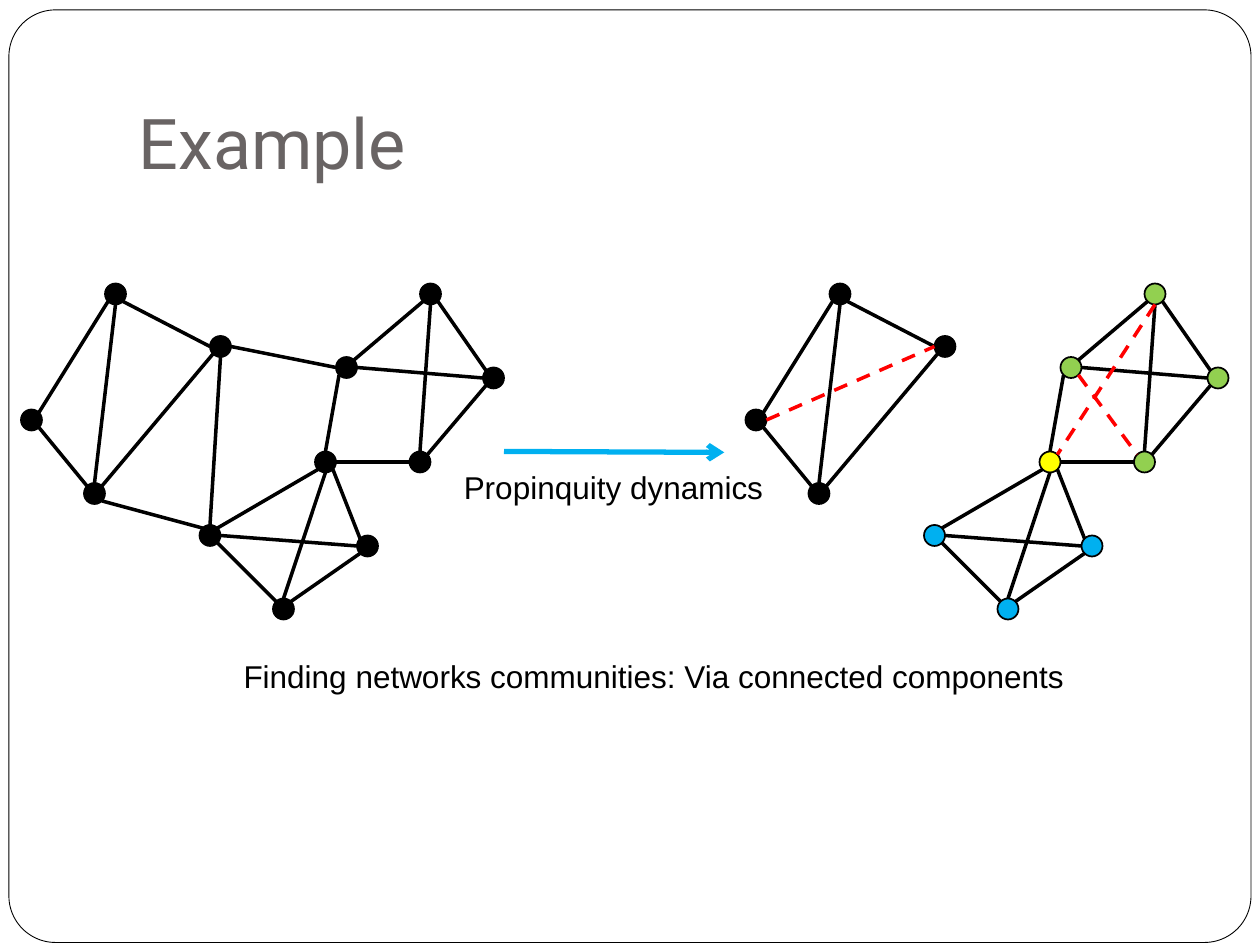
from math import cos, radians, sin

from pptx import Presentation
from pptx.dml.color import RGBColor
from pptx.enum.dml import MSO_LINE_DASH_STYLE as DASH
from pptx.enum.shapes import MSO_CONNECTOR, MSO_SHAPE
from pptx.enum.text import MSO_ANCHOR, PP_ALIGN
from pptx.oxml.ns import qn
from pptx.util import Cm, Pt
from lxml.etree import SubElement

# Content: node corners on a grid of 1/12 inch
NODES = dict(A=(10, 27), B=(2, 39), C=(20, 32), D=(8, 46),
             E=(32, 34), F=(40, 27), G=(46, 35), H=(39, 43),
             I=(30, 43), J=(19, 50), K=(34, 51), L=(26, 57))

# Edges: node and side at each end
EDGES = ["A sw B ne", "C w A se", "B se D nw", "C sw D ne", "A s D n",
         "F sw E ne", "G nw F se", "G sw H ne", "E sw I n", "H w I e",
         "F s H n", "G w E e", "I sw J ne", "K sw L ne", "I se K nw",
         "J se L nw", "I s L n", "K w J e"]
BRIDGES = ["E w C e", "C s J n", "D se J nw"]
NEW_EDGES = ["E se H nw", "B e C w", "F s I ne"]

BLACK, RED, BLUE = "000000", "FF0000", "00B0F0"
GREEN, YELLOW, WHITE, GREY = "92D050", "FFFF00", "FFFFFF", "696464"
COMMUNITIES = {"ABCD": BLACK, "EFGH": GREEN, "I": YELLOW, "JKL": BLUE}

# Graphs: horizontal shift, node colours, solid edges, dashed edges
GRAPHS = [
    (0, {"ABCDEFGHIJKL": BLACK}, EDGES + BRIDGES, []),
    (69, COMMUNITIES, EDGES, NEW_EDGES),
]

# Captions: text, left, top, width
CAPTIONS = [
    ("Propinquity dynamics", 9.1, 9.31, 6.78),
    ("Finding networks communities: Via connected components", 4.66, 13.12, 17.35),
]

UNIT = 2.54 / 12
SIZE = 2
SIDES = {side: radians(45 * i) for i, side in
         enumerate(["e", "se", "s", "sw", "w", "nw", "n", "ne"])}


def rgb(color):
    return RGBColor.from_string(color)


def write(tf, text, size=18, font="Arial", color=BLACK):
    tf.word_wrap = True
    p = tf.paragraphs[0]
    p.alignment = PP_ALIGN.LEFT
    r = p.add_run()
    r.text = text
    r.font.size, r.font.name = Pt(size), font
    r.font.color.rgb = rgb(color)


def add_shape(shapes, kind, box, fill, weight):
    sp = shapes.add_shape(kind, *[Cm(v) for v in box])
    sp.shadow.inherit = False
    sp.fill.solid()
    sp.fill.fore_color.rgb = rgb(fill)
    sp.line.color.rgb = rgb(BLACK)
    sp.line.width = Pt(weight)
    return sp


def add_line(shapes, start, end, color=BLACK, weight=2, dashed=False, arrow=False):
    ends = [Cm(v) for v in (*start, *end)]
    cx = shapes.add_connector(MSO_CONNECTOR.STRAIGHT, *ends)
    cx.line.color.rgb = rgb(color)
    cx.line.width = Pt(weight)
    if dashed:
        cx.line.dash_style = DASH.DASH
    sp_pr = cx.element.spPr
    if arrow:
        SubElement(sp_pr.find(qn("a:ln")), qn("a:tailEnd"), type="arrow")
    SubElement(sp_pr, qn("a:effectLst"))


def edge_point(node, side, shift):
    x, y = NODES[node]
    radius, angle = SIZE / 2, SIDES[side]
    return ((x + shift + radius * (1 + cos(angle))) * UNIT,
            (y + radius * (1 + sin(angle))) * UNIT)


def add_graph(s, shift, colors, solid, dashed):
    shapes = s.shapes.add_group_shape().shapes
    for names, color in colors.items():
        for name in names:
            x, y = NODES[name]
            box = [v * UNIT for v in (x + shift, y, SIZE, SIZE)]
            add_shape(shapes, MSO_SHAPE.OVAL, box, color, 1)
    for edge in solid + dashed:
        a, side_a, b, side_b = edge.split()
        is_new = edge in dashed
        add_line(shapes, edge_point(a, side_a, shift), edge_point(b, side_b, shift),
                 color=RED if is_new else BLACK, dashed=is_new)


def main():
    prs = Presentation()
    prs.slide_width, prs.slide_height = Cm(25.4), Cm(19.05)
    s = prs.slides.add_slide(prs.slide_layouts[5])

    # Title
    title = s.shapes.title
    title.left, title.top, title.width, title.height = Cm(2.54), Cm(0.76), Cm(21.59), Cm(3.18)
    tf = title.text_frame
    tf.vertical_anchor = MSO_ANCHOR.BOTTOM
    tf.margin_bottom = Cm(0.25)
    write(tf, "Example", size=40, font="Roboto", color=GREY)

    # Page frame, behind the title
    frame = add_shape(s.shapes, MSO_SHAPE.ROUNDED_RECTANGLE,
                      (0.18, 0.2, 25.04, 18.8), WHITE, 0.5)
    frame.adjustments[0] = 0.05
    title.element.addprevious(frame.element)

    # Graphs before and after
    for graph in GRAPHS:
        add_graph(s, *graph)

    # Captions and arrow
    for text, left, top, width in CAPTIONS:
        box = s.shapes.add_textbox(Cm(left), Cm(top), Cm(width), Cm(1.02))
        write(box.text_frame, text)
    add_line(s.shapes, (10.16, 9.1), (14.6, 9.12), color=BLUE, weight=3, arrow=True)

    prs.save("out.pptx")


if __name__ == "__main__":
    main()
